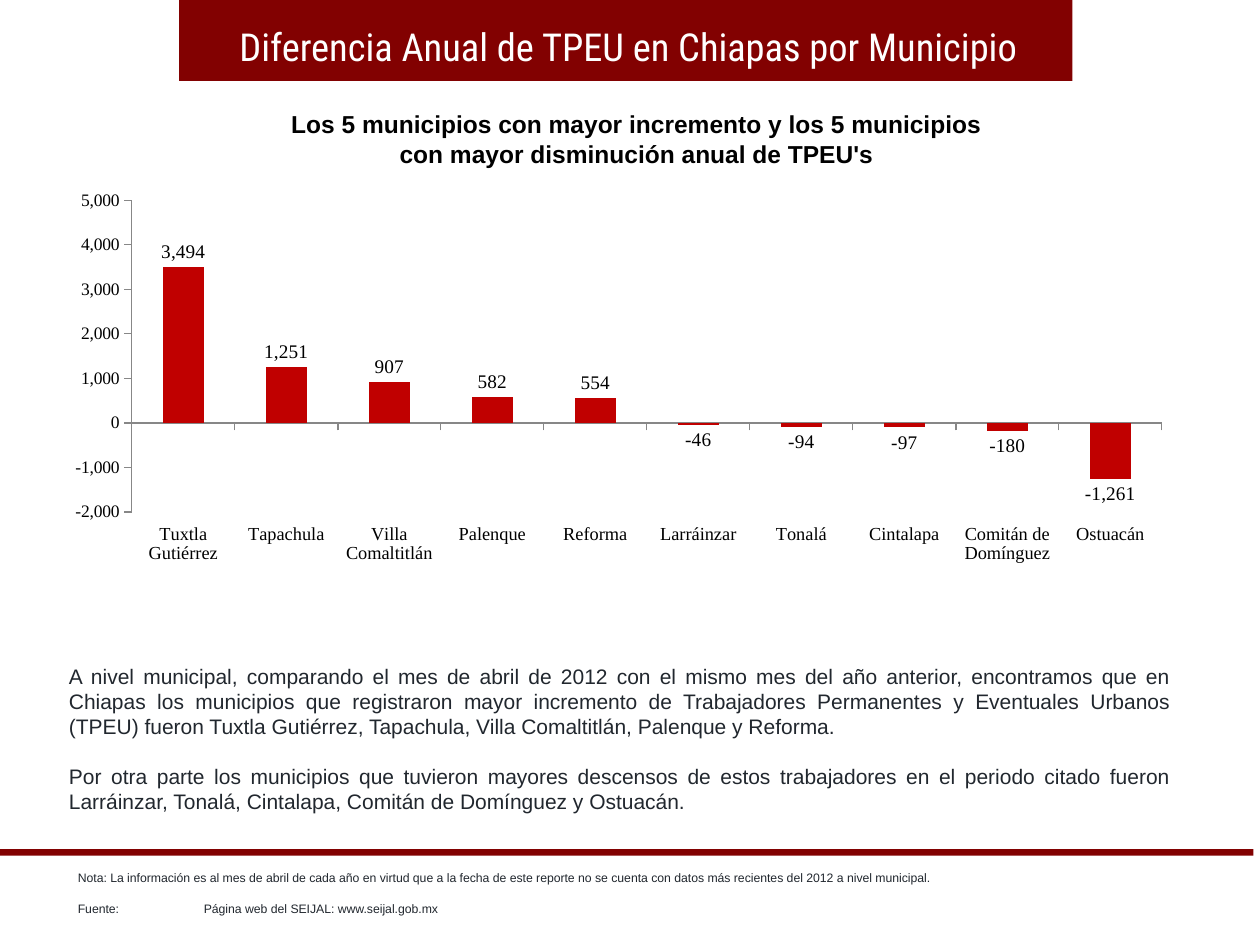
"""Build the slide on the annual TPEU difference by municipality in Chiapas."""
from dataclasses import dataclass

from lxml.etree import SubElement
from pptx import Presentation
from pptx.chart.data import CategoryChartData
from pptx.dml.color import RGBColor
from pptx.enum.chart import XL_CHART_TYPE, XL_LABEL_POSITION, XL_TICK_LABEL_POSITION, XL_TICK_MARK
from pptx.enum.shapes import MSO_SHAPE
from pptx.enum.text import MSO_ANCHOR, MSO_AUTO_SIZE, PP_ALIGN
from pptx.oxml.ns import qn
from pptx.util import Cm, Pt


@dataclass(frozen=True)
class Theme:
    band: RGBColor = RGBColor(0x82, 0x01, 0x01)
    column: RGBColor = RGBColor(0xC0, 0x00, 0x00)
    axis: RGBColor = RGBColor(0x87, 0x87, 0x87)
    text: RGBColor = RGBColor(0x21, 0x27, 0x2E)
    black: RGBColor = RGBColor(0x00, 0x00, 0x00)
    white: RGBColor = RGBColor(0xFF, 0xFF, 0xFF)
    title_size: Pt = Pt(22)
    heading_size: Pt = Pt(14)
    body_size: Pt = Pt(12)
    note_size: Pt = Pt(7)
    label_size: Pt = Pt(11)
    category_size: Pt = Pt(10.5)
    value_size: Pt = Pt(10)


theme = Theme()


def set_font(font, color, **values):
    for name, value in values.items():
        setattr(font, name, value)
    font.color.rgb = color


def write(box, lines, alignment, gap, color, **values):
    frame = box.text_frame
    frame.text = "\n".join(lines)
    for index, para in enumerate(frame.paragraphs):
        para.alignment = alignment
        para.space_before = Pt(gap if index else 0)
        for span in para.runs:
            set_font(span.font, color, **values)


deck = Presentation()
deck.slide_width, deck.slide_height = Cm(25.4), Cm(19.05)
page = deck.slides.add_slide(deck.slide_layouts[5])
shapes = page.shapes
title = shapes.title

bands = [(3.61, 0, 18.01, 1.63), (0, 17.12, 25.27, 0.13)]
for place in bands:
    band = shapes.add_shape(MSO_SHAPE.RECTANGLE, *map(Cm, place))
    band.shadow.inherit = False
    band.fill.solid()
    band.fill.fore_color.rgb = theme.band
    band.line.fill.background()
    title.element.addprevious(band.element)

title.left, title.top, title.width, title.height = map(Cm, (3.71, 0.33, 17.91, 1.19))
title.text_frame.auto_size = MSO_AUTO_SIZE.NONE
title.text_frame.vertical_anchor = MSO_ANCHOR.MIDDLE
write(title, ["Diferencia Anual de TPEU en Chiapas por Municipio"], PP_ALIGN.CENTER, 0,
      theme.white, size=theme.title_size, name="Roboto Condensed")

note = shapes.add_textbox(Cm(1.32), Cm(17.42), Cm(17.98), Cm(1.14))
note.text_frame.word_wrap = False
write(note, [
    "Nota: La información es al mes de abril de cada año en virtud que a la fecha de este "
    "reporte no se cuenta con datos más recientes del 2012 a nivel municipal.",
    "Fuente:\tPágina web del SEIJAL: www.seijal.gob.mx",
], PP_ALIGN.LEFT, 9, theme.text, size=theme.note_size, name="Arial")
source = note.text_frame.paragraphs[-1]
tabs = SubElement(source._p.get_or_add_pPr(), qn("a:tabLst"))
SubElement(tabs, qn("a:tab"), pos=str(Cm(2.54)), algn="l")

heading = shapes.add_textbox(Cm(1.47), Cm(2.08), Cm(22.73), Cm(1.45))
heading.text_frame.word_wrap = True
write(heading, [
    "Los 5 municipios con mayor incremento y los 5 municipios",
    "con mayor disminución anual de TPEU's",
], PP_ALIGN.CENTER, 0, theme.black, size=theme.heading_size, name="Arial", bold=True)

differences = {
    "Tuxtla Gutiérrez": 3494,
    "Tapachula": 1251,
    "Villa Comaltitlán": 907,
    "Palenque": 582,
    "Reforma": 554,
    "Larráinzar": -46,
    "Tonalá": -94,
    "Cintalapa": -97,
    "Comitán de Domínguez": -180,
    "Ostuacán": -1261,
}
data = CategoryChartData(number_format="#,##0")
data.categories = list(differences)
data.add_series("Diferencia anual", list(differences.values()))
chart = shapes.add_chart(XL_CHART_TYPE.COLUMN_CLUSTERED, Cm(1.52), Cm(3.84),
                         Cm(22.35), Cm(8.41), data).chart
chart.has_legend = False
chart.has_title = False
set_font(chart.font, theme.black, size=theme.value_size, name="Times New Roman")

axes = [(chart.category_axis, theme.category_size), (chart.value_axis, theme.value_size)]
for axis, size in axes:
    axis.has_major_gridlines = False
    axis.major_tick_mark = XL_TICK_MARK.OUTSIDE
    axis.minor_tick_mark = XL_TICK_MARK.NONE
    axis.format.line.color.rgb = theme.axis
    axis.tick_labels.font.size = size
chart.category_axis.tick_label_position = XL_TICK_LABEL_POSITION.LOW
scale = {"minimum_scale": -2000, "maximum_scale": 5000, "major_unit": 1000}
for name, value in scale.items():
    setattr(chart.value_axis, name, value)
chart.value_axis.tick_labels.number_format = "#,##0"
chart.value_axis.tick_labels.number_format_is_linked = False

plot = chart.plots[0]
plot.gap_width = 150
plot.vary_by_categories = False
columns = plot.series[0]
columns.invert_if_negative = False
columns.format.fill.solid()
columns.format.fill.fore_color.rgb = theme.column
plot.has_data_labels = True
label_format = {
    "show_value": True,
    "number_format": "#,##0",
    "number_format_is_linked": False,
    "position": XL_LABEL_POSITION.OUTSIDE_END,
}
for name, value in label_format.items():
    setattr(plot.data_labels, name, value)
set_font(plot.data_labels.font, theme.black, size=theme.label_size, name="Times New Roman")

plot_area = chart.element.find(".//" + qn("c:plotArea"))
layout = plot_area.find(qn("c:layout"))
if layout is None:
    layout = SubElement(plot_area, qn("c:layout"))
    plot_area.insert(0, layout)
manual = SubElement(layout, qn("c:manualLayout"))
placement = {"layoutTarget": "inner", "xMode": "edge", "yMode": "edge",
             "x": 0.05, "y": 0.02, "w": 0.93, "h": 0.75}
for name, value in placement.items():
    SubElement(manual, qn(f"c:{name}"), val=str(value))

body = shapes.add_shape(MSO_SHAPE.ROUNDED_RECTANGLE, Cm(1.14), Cm(12.93), Cm(22.73), Cm(3.91))
body.adjustments[0] = 0
body.shadow.inherit = False
body.fill.background()
body.line.fill.background()
body.text_frame.word_wrap = True
body.text_frame.vertical_anchor = MSO_ANCHOR.MIDDLE
write(body, [
    "A nivel municipal, comparando el mes de abril de 2012 con el mismo mes del año anterior, "
    "encontramos que en Chiapas los municipios que registraron mayor incremento de Trabajadores "
    "Permanentes y Eventuales Urbanos (TPEU) fueron Tuxtla Gutiérrez, Tapachula, "
    "Villa Comaltitlán, Palenque y Reforma.",
    "Por otra parte los municipios que tuvieron mayores descensos de estos trabajadores en el "
    "periodo citado fueron Larráinzar, Tonalá, Cintalapa, Comitán de Domínguez y Ostuacán.",
], PP_ALIGN.JUSTIFY, 14, theme.text, size=theme.body_size, name="Arial")

deck.save("out.pptx")
